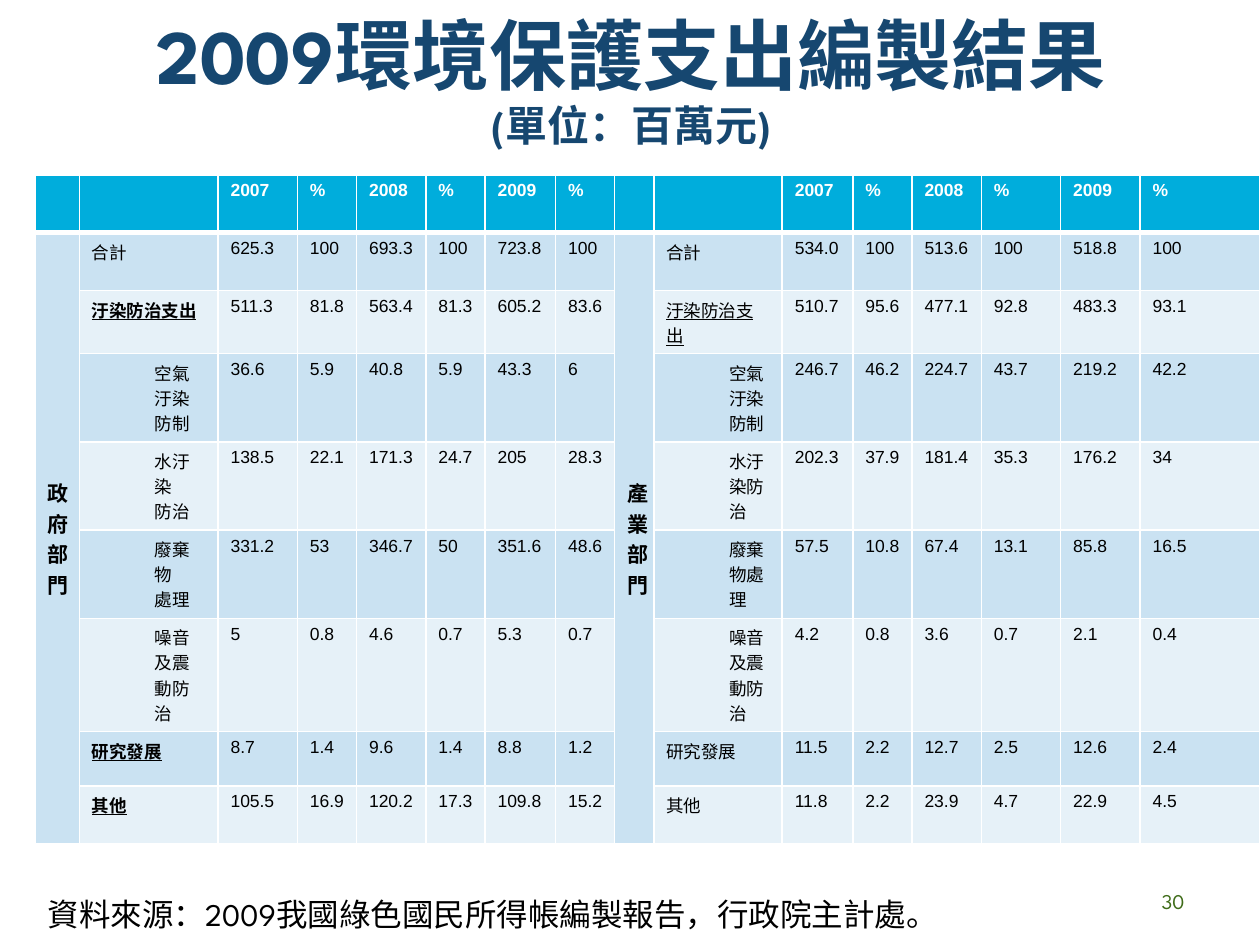
from lxml.etree import SubElement
from pptx import Presentation
from pptx.dml.color import RGBColor
from pptx.enum.text import MSO_ANCHOR, PP_ALIGN
from pptx.oxml.ns import qn
from pptx.util import Inches, Pt

COLORS = {
    "title": "164770", "header": "00ADDC", "odd": "CAE2F2", "even": "E6F1F8",
    "white": "FFFFFF", "black": "000000", "number": "3F6C19",
}
PAGE_WIDTH, PAGE_HEIGHT = 10, 7.5
COLUMNS = [0.35, 1.1, 0.63, 0.47, 0.55, 0.47, 0.56, 0.47,
           0.31, 1.02, 0.56, 0.47, 0.55, 0.63, 0.63, 0.95]
ROWS = [0.46, 0.46, 0.5, 0.7, 0.7, 0.7, 0.9, 0.43, 0.46]
HEADINGS = ["2007", "%", "2008", "%", "2009", "%"]
INDENTED_ROWS = range(3, 7)

GOVERNMENT = {
    "name": "政府部門",
    "accent": {"bold": True, "underline": True},
    "accent_rows": (2, 7, 8),
    "lines": [
        ("合計", "625.3 100 693.3 100 723.8 100"),
        ("汙染防治支出", "511.3 81.8 563.4 81.3 605.2 83.6"),
        ("空氣汙染防制", "36.6 5.9 40.8 5.9 43.3 6"),
        ("水汙染\n防治", "138.5 22.1 171.3 24.7 205 28.3"),
        ("廢棄物\n處理", "331.2 53 346.7 50 351.6 48.6"),
        ("噪音及震動防治", "5 0.8 4.6 0.7 5.3 0.7"),
        ("研究發展", "8.7 1.4 9.6 1.4 8.8 1.2"),
        ("其他", "105.5 16.9 120.2 17.3 109.8 15.2"),
    ],
}
INDUSTRY = {
    "name": "產業部門",
    "accent": {"underline": True},
    "accent_rows": (2,),
    "lines": [
        ("合計", "534.0 100 513.6 100 518.8 100"),
        ("汙染防治支出", "510.7 95.6 477.1 92.8 483.3 93.1"),
        ("空氣汙染防制", "246.7 46.2 224.7 43.7 219.2 42.2"),
        ("水汙染防治", "202.3 37.9 181.4 35.3 176.2 34"),
        ("廢棄物處理", "57.5 10.8 67.4 13.1 85.8 16.5"),
        ("噪音及震動防治", "4.2 0.8 3.6 0.7 2.1 0.4"),
        ("研究發展", "11.5 2.2 12.7 2.5 12.6 2.4"),
        ("其他", "11.8 2.2 23.9 4.7 22.9 4.5"),
    ],
}


def share_box(left, top, width, height):
    """Turn shares of the slide into lengths."""
    return (Inches(left * PAGE_WIDTH), Inches(top * PAGE_HEIGHT),
            Inches(width * PAGE_WIDTH), Inches(height * PAGE_HEIGHT))


def style_font(font, color, **values):
    """Apply a colour and a set of format values to a font."""
    font.color.rgb = RGBColor.from_string(COLORS[color])
    for name, value in values.items():
        setattr(font, name, value)


def add_text(page, box, lines, color, align, anchor):
    """Place one paragraph whose lines each have their own format values."""
    frame = page.shapes.add_textbox(*box).text_frame
    frame.word_wrap = True
    frame.vertical_anchor = anchor
    para = frame.paragraphs[0]
    para.alignment = align
    for index, (text, values) in enumerate(lines):
        if index:
            para.add_line_break()
        span = para.add_run()
        span.text = text
        style_font(span.font, color, name="League Spartan", **values)


def paint_cell(cell, row):
    """Give a cell its white rules and banded fill."""
    heavy = {0: "lnB", 1: "lnT"}.get(row)
    properties = cell._tc.get_or_add_tcPr()
    for side in ("lnL", "lnR", "lnT", "lnB"):
        width = Pt(3 if side == heavy else 1)
        rule = SubElement(properties, qn(f"a:{side}"), w=str(width))
        fill = SubElement(rule, qn("a:solidFill"))
        SubElement(fill, qn("a:srgbClr"), val=COLORS["white"])
    band = "header" if row == 0 else "odd" if row % 2 else "even"
    cell.fill.solid()
    cell.fill.fore_color.rgb = RGBColor.from_string(COLORS[band])


def write_cell(cell, text, color="black", indent=False, align=None, **values):
    """Write a cell's paragraphs with shared formatting."""
    cell.text = text
    formats = {"name": "Arial", "size": Pt(10), "bold": False} | values
    for para in cell.text_frame.paragraphs:
        para.alignment = align
        if indent:
            para.level = 1
            para._p.get_or_add_pPr().set("marL", str(Inches(0.5)))
        for span in para.runs:
            style_font(span.font, color, **formats)


def fill_sector(table, sector, first):
    """Fill one sector's eight columns, starting at the given column."""
    last_row = len(sector["lines"])
    name_cell = table.cell(1, first)
    name_cell.merge(table.cell(last_row, first))
    name_cell.vertical_anchor = MSO_ANCHOR.MIDDLE
    write_cell(name_cell, sector["name"], align=PP_ALIGN.JUSTIFY, size=Pt(12), bold=True)
    for column, heading in enumerate(HEADINGS, first + 2):
        write_cell(table.cell(0, column), heading, "white", bold=True)
    for row, (label, values) in enumerate(sector["lines"], 1):
        accent = sector["accent"] if row in sector["accent_rows"] else {}
        write_cell(table.cell(row, first + 1), label, indent=row in INDENTED_ROWS, **accent)
        for column, value in enumerate(values.split(), first + 2):
            write_cell(table.cell(row, column), value)


def add_expenditure_table(page, box):
    """Place the table of both sectors in the given box."""
    table = page.shapes.add_table(len(ROWS), len(COLUMNS), *box).table
    table.first_row = table.horz_banding = False
    for column, width in zip(table.columns, COLUMNS):
        column.width = Inches(width)
    for index, (row, height) in enumerate(zip(table.rows, ROWS)):
        row.height = Inches(height)
        for cell in row.cells:
            paint_cell(cell, index)
    for position, sector in enumerate((GOVERNMENT, INDUSTRY)):
        fill_sector(table, sector, position * len(COLUMNS) // 2)


def build_page(page):
    """Place the title, table, page number and source line."""
    add_text(page, share_box(0.051, 0, 0.9, 0.167),
             [("2009環境保護支出編製結果", {"size": Pt(44), "bold": True}),
              ("(單位：百萬元)", {"size": Pt(24), "bold": True})],
             "title", PP_ALIGN.CENTER, MSO_ANCHOR.MIDDLE)
    add_expenditure_table(page, share_box(0.028, 0.185, sum(COLUMNS) / PAGE_WIDTH,
                                          sum(ROWS) / PAGE_HEIGHT))
    add_text(page, share_box(0.717, 0.927, 0.233, 0.053), [("30", {"size": Pt(12)})],
             "number", PP_ALIGN.RIGHT, MSO_ANCHOR.MIDDLE)
    add_text(page, share_box(0.028, 0.941, 0.882, 0.053),
             [("資料來源：2009我國綠色國民所得帳編製報告，行政院主計處。", {"size": Pt(18)})],
             "black", PP_ALIGN.LEFT, MSO_ANCHOR.TOP)


def main():
    """Build and save the deck."""
    deck = Presentation()
    deck.slide_width, deck.slide_height = Inches(PAGE_WIDTH), Inches(PAGE_HEIGHT)
    build_page(deck.slides.add_slide(deck.slide_layouts[6]))
    deck.save("out.pptx")


if __name__ == "__main__":
    main()
